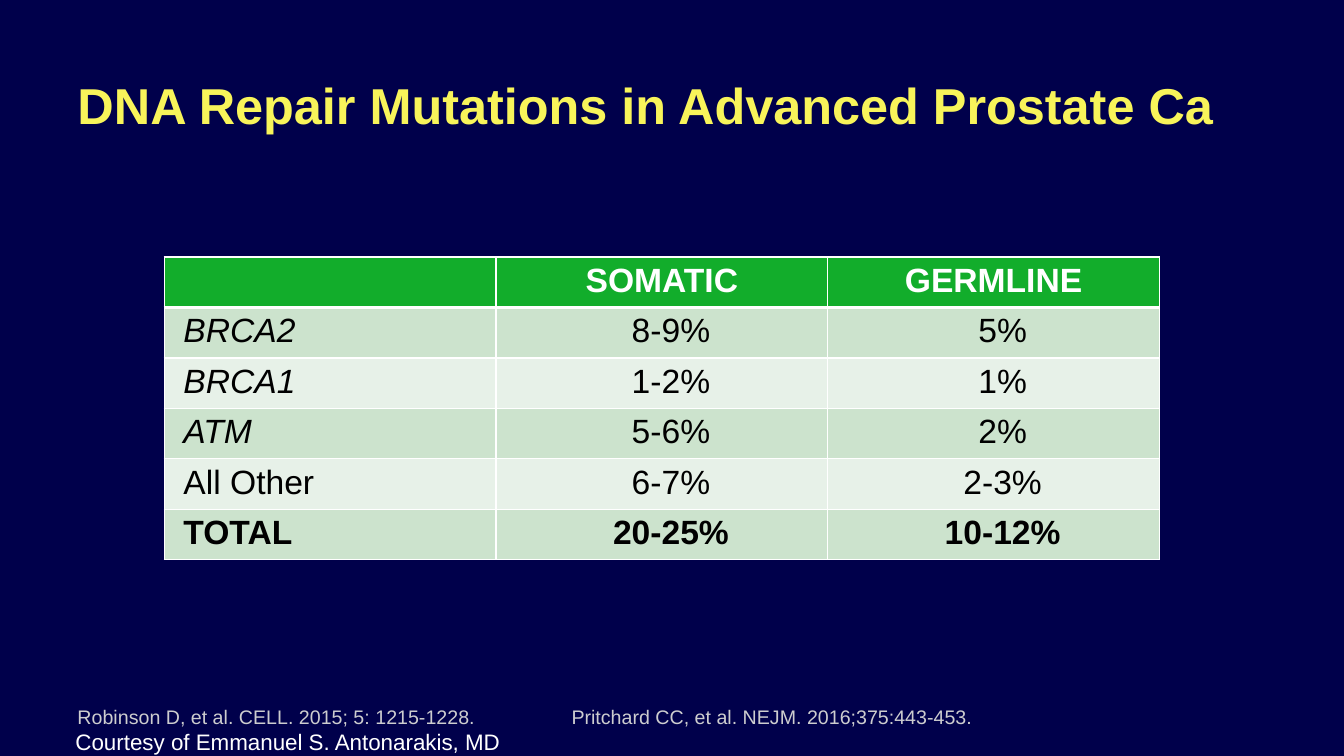
import dataclasses

import lxml.etree
import pptx
import pptx.dml.color
import pptx.enum.text
import pptx.oxml.ns
import pptx.util

Inches = pptx.util.Inches
ALIGN = pptx.enum.text.PP_ALIGN
ANCHOR = pptx.enum.text.MSO_ANCHOR


@dataclasses.dataclass(frozen=True)
class Theme:
    font: str = "Arial"
    background: str = "00004B"
    title: str = "F8F45A"
    reference: str = "CDCDCF"
    light: str = "FFFFFF"
    dark: str = "000000"
    header: str = "12AD2B"
    bands: tuple = ("CCE3CD", "E7F1E8")
    title_size: int = 36
    table_size: int = 24
    reference_size: int = 14
    courtesy_size: int = 16
    rule: int = 1
    header_rule: int = 3


THEME = Theme()
TITLE = "DNA Repair Mutations in Advanced Prostate Ca"
REFERENCES = (
    "Robinson D, et al. CELL. 2015; 5: 1215-1228.",
    "Pritchard CC, et al. NEJM. 2016;375:443-453.",
)
COURTESY = "Courtesy of Emmanuel S. Antonarakis, MD"
MUTATIONS = (
    ("", "SOMATIC", "GERMLINE"),
    ("BRCA2", "8-9%", "5%"),
    ("BRCA1", "1-2%", "1%"),
    ("ATM", "5-6%", "2%"),
    ("All Other", "6-7%", "2-3%"),
    ("TOTAL", "20-25%", "10-12%"),
)
GENES = ("BRCA2", "BRCA1", "ATM")


def rgb(value):
    return pptx.dml.color.RGBColor.from_string(value)


def set_all(target, values):
    for name, value in values.items():
        setattr(target, name, value)


def style(p, size, color, bold=False, italic=False):
    set_all(p.font, {"name": THEME.font, "size": pptx.util.Pt(size),
                     "bold": bold, "italic": italic})
    p.font.color.rgb = rgb(color)


def add_line(s, box, text, size, color, anchor=ANCHOR.TOP, bold=False, tab=None):
    sp = s.shapes.add_textbox(*map(Inches, box))
    tf = sp.text_frame
    set_all(tf, {"word_wrap": True, "vertical_anchor": anchor})
    p = tf.paragraphs[0]
    p.text = text
    if tab:
        tabs = lxml.etree.SubElement(p._p.get_or_add_pPr(), pptx.oxml.ns.qn("a:tabLst"))
        lxml.etree.SubElement(tabs, pptx.oxml.ns.qn("a:tab"),
                              pos=str(Inches(tab)), algn="l")
    style(p, size, color, bold)


def add_borders(cell, widths):
    tc_pr = cell._tc.get_or_add_tcPr()
    for side, width in zip("LRTB", widths):
        ln = lxml.etree.SubElement(tc_pr, pptx.oxml.ns.qn(f"a:ln{side}"),
                                   w=str(pptx.util.Pt(width)))
        fill = lxml.etree.SubElement(ln, pptx.oxml.ns.qn("a:solidFill"))
        lxml.etree.SubElement(fill, pptx.oxml.ns.qn("a:srgbClr"), val=THEME.light)


def fill_cell(cell, row, col, text):
    header = row == 0
    top = THEME.header_rule if row == 1 else THEME.rule
    bottom = THEME.header_rule if header else THEME.rule
    add_borders(cell, (THEME.rule, THEME.rule, top, bottom))
    cell.fill.solid()
    cell.fill.fore_color.rgb = rgb(THEME.header if header else THEME.bands[(row - 1) % 2])
    indent = 0 if header else 0.18 if col else 0.09
    cell.margin_left = Inches(0.1 + indent)
    p = cell.text_frame.paragraphs[0]
    p.text = text
    p.alignment = ALIGN.CENTER if col else ALIGN.LEFT
    style(p, THEME.table_size, THEME.light if header else THEME.dark,
          bold=header or row == len(MUTATIONS) - 1, italic=text in GENES)


def add_mutation_table(s, box):
    rows, cols = len(MUTATIONS), len(MUTATIONS[0])
    table = s.shapes.add_table(rows, cols, *map(Inches, box)).table
    for column in table.columns:
        column.width = Inches(box[2] / cols)
    for r, values in enumerate(MUTATIONS):
        table.rows[r].height = Inches(box[3] / rows)
        for c, text in enumerate(values):
            fill_cell(table.cell(r, c), r, c, text)


def add_footer(s, box):
    left, top, width, height = box
    add_line(s, (left + 0.02, top, width, 0.33), "\t".join(REFERENCES),
             THEME.reference_size, THEME.reference, tab=4.9)
    add_line(s, (left, top + 0.23, 4.59, height - 0.23), COURTESY,
             THEME.courtesy_size, THEME.light)


def main():
    prs = pptx.Presentation()
    set_all(prs, {"slide_width": Inches(13.33), "slide_height": Inches(7.5)})
    s = prs.slides.add_slide(prs.slide_layouts[6])
    s.background.fill.solid()
    s.background.fill.fore_color.rgb = rgb(THEME.background)
    add_line(s, (0.67, 0.43, 11.89, 1.21), TITLE, THEME.title_size, THEME.title,
             anchor=ANCHOR.MIDDLE, bold=True)
    add_mutation_table(s, (1.63, 2.55, 9.87, 3))
    add_footer(s, (0.65, 6.94, 10.51, 0.56))
    prs.save("out.pptx")


if __name__ == "__main__":
    main()
